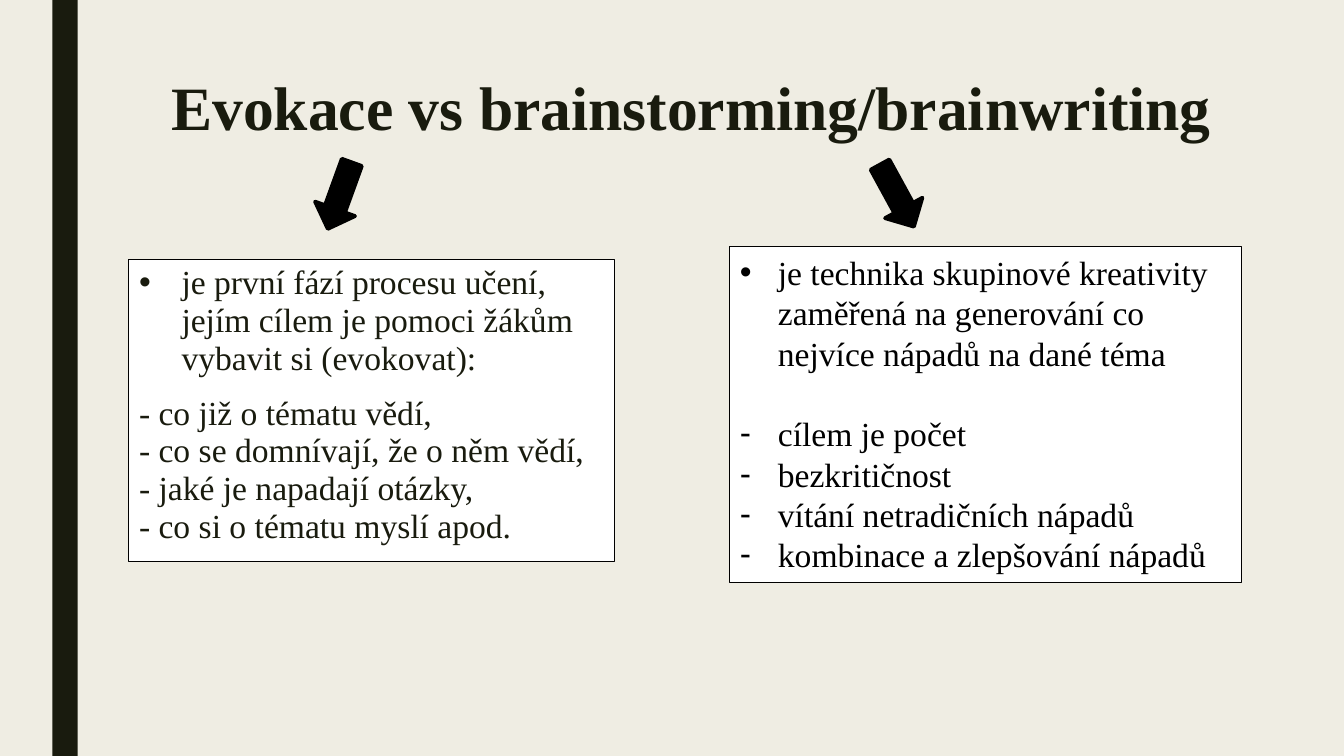
from dataclasses import dataclass

from lxml.etree import SubElement
from pptx import Presentation
from pptx.dml.color import RGBColor
from pptx.enum.shapes import MSO_SHAPE as Preset
from pptx.enum.text import MSO_ANCHOR as Anchor, MSO_AUTO_SIZE as AutoSize, PP_ALIGN as Align
from pptx.oxml.ns import qn
from pptx.util import Cm, Pt

COLORS = {"paper": "EFEDE3", "dark": "191B0E", "black": "000000", "white": "FFFFFF"}
FONT = "Times New Roman"


@dataclass
class Item:
    text: str
    bullet: str = ""
    before: float = 0
    after: float = 0


@dataclass
class Panel:
    placeholder: int
    box: tuple[float, float, float, float]
    color: str
    indent: float
    spacing: float
    items: list[Item]


@dataclass
class Arrow:
    left: float
    rotation: float


PANELS = [
    Panel(1, (3.25, 6.53, 12.24, 7.62), "dark", 1.07, 0.94, [
        Item("je první fází procesu učení, jejím cílem je pomoci žákům "
             "vybavit si (evokovat):", "•", 10, 2),
        Item("- co již o tématu vědí,\v- co se domnívají, že o něm vědí,\v"
             "- jaké je napadají otázky,\v- co si o tématu myslí apod.", "", 10, 2),
    ]),
    Panel(2, (18.39, 6.22, 12.9, 8.46), "black", 0.96, 1, [
        Item("je technika skupinové kreativity zaměřená na generování co "
             "nejvíce nápadů na dané téma", "•"),
        Item("cílem je počet", "-", 28.8),
        Item("bezkritičnost", "-"),
        Item("vítání netradičních nápadů", "-"),
        Item("kombinace a zlepšování nápadů", "-"),
    ]),
]
ARROWS = [Arrow(8.03, 19.9), Arrow(22.07, 331.3)]


def rgb(name: str) -> RGBColor:
    return RGBColor.from_string(COLORS[name])


def place(shape, left: float, top: float, width: float, height: float) -> None:
    shape.left, shape.top, shape.width, shape.height = map(Cm, (left, top, width, height))


def paint(shape, fill: str, line: str = "", weight: float = 0.75) -> None:
    shape.fill.solid()
    shape.fill.fore_color.rgb = rgb(fill)
    if line:
        shape.line.color.rgb = rgb(line)
        shape.line.width = Pt(weight)
    else:
        shape.line.fill.background()


def prepare_frame(shape):
    frame = shape.text_frame
    frame.word_wrap = True
    frame.auto_size = AutoSize.NONE
    frame.vertical_anchor = Anchor.TOP
    return frame


def write(paragraph, text: str, *, size: float, color: str, bold: bool = False,
          align=Align.LEFT, spacing: float = 1, before: float = 0, after: float = 0) -> None:
    paragraph.text = text
    paragraph.alignment = align
    paragraph.line_spacing = spacing
    paragraph.space_before, paragraph.space_after = Pt(before), Pt(after)
    paragraph.font.size = Pt(size)
    for run in paragraph.runs:
        run.font.name = FONT
        run.font.size = Pt(size)
        run.font.bold = bold
        run.font.color.rgb = rgb(color)


def set_bullet(paragraph, bullet: str, indent: float) -> None:
    properties = paragraph._p.get_or_add_pPr()
    hanging = Cm(indent) if bullet else 0
    properties.set("marL", str(hanging))
    properties.set("indent", str(-hanging))
    if bullet:
        SubElement(properties, qn("a:buFont"), typeface="Arial")
        SubElement(properties, qn("a:buChar"), char=bullet)
    else:
        SubElement(properties, qn("a:buNone"))


def draw_panel(slide, panel: Panel) -> None:
    shape = slide.placeholders[panel.placeholder]
    place(shape, *panel.box)
    paint(shape, "white", "black")
    frame = prepare_frame(shape)
    for number, item in enumerate(panel.items):
        paragraph = frame.add_paragraph() if number else frame.paragraphs[0]
        write(paragraph, item.text, size=24, color=panel.color, spacing=panel.spacing,
              before=item.before, after=item.after)
        set_bullet(paragraph, item.bullet, panel.indent)


def draw_arrow(slide, arrow: Arrow) -> None:
    shape = slide.shapes.add_shape(Preset.DOWN_ARROW, Cm(arrow.left), Cm(4.04), Cm(1.07), Cm(1.78))
    shape.rotation = arrow.rotation
    shape.shadow.inherit = False
    paint(shape, "black", "black", 2.75)


def main() -> None:
    presentation = Presentation()
    presentation.slide_width, presentation.slide_height = Cm(33.87), Cm(19.05)
    slide = presentation.slides.add_slide(presentation.slide_layouts[3])

    # Background and side stripe
    slide.background.fill.solid()
    slide.background.fill.fore_color.rgb = rgb("paper")
    stripe = slide.shapes.add_shape(Preset.RECTANGLE, Cm(1.32), 0, Cm(0.64), Cm(19.05))
    stripe.shadow.inherit = False
    paint(stripe, "dark")

    # Title
    title = slide.shapes.title
    place(title, 3.81, 1.83, 27.25, 4.11)
    write(prepare_frame(title).paragraphs[0], "Evokace vs brainstorming/brainwriting",
          size=44, color="dark", bold=True, align=Align.CENTER, spacing=0.89)

    # Compared panels and the arrows leading to them
    for panel in PANELS:
        draw_panel(slide, panel)
    for arrow in ARROWS:
        draw_arrow(slide, arrow)

    presentation.save("out.pptx")


if __name__ == "__main__":
    main()
